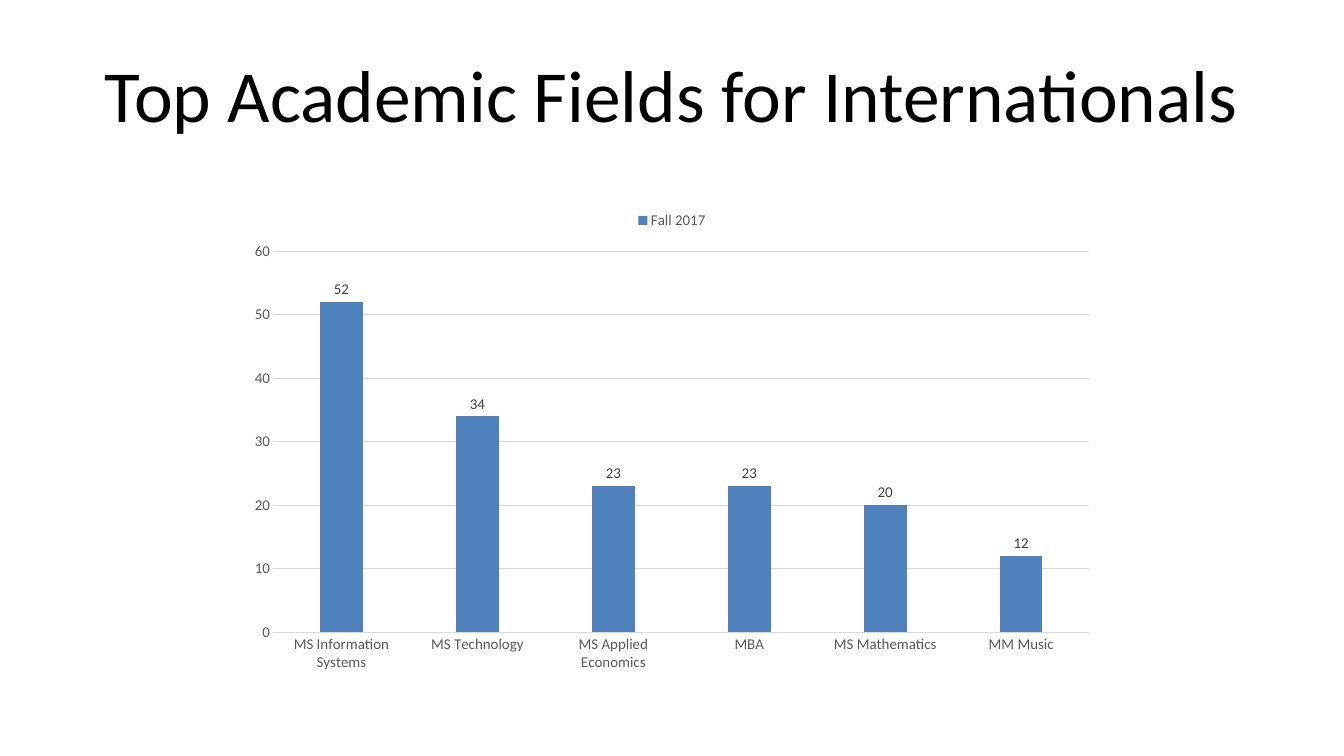
from pptx import Presentation
from pptx.chart.data import CategoryChartData
from pptx.dml.color import RGBColor
from pptx.enum.chart import XL_CHART_TYPE as ChartType, XL_LABEL_POSITION as LabelPosition
from pptx.enum.chart import XL_LEGEND_POSITION as LegendPosition, XL_TICK_MARK as TickMark
from pptx.enum.text import MSO_ANCHOR, PP_ALIGN
from pptx.util import Inches, Pt

TITLE = "Top Academic Fields for Internationals"
TERM = "Fall 2017"
STUDENTS = {
    "MS Information Systems": 52,
    "MS Technology": 34,
    "MS Applied Economics": 23,
    "MBA": 23,
    "MS Mathematics": 20,
    "MM Music": 12,
}
BLACK, GRAY, DARK_GRAY, LIGHT_GRAY, BLUE = "000000", "595959", "404040", "D9D9D9", "4F81BD"


def set_font(font, size, color):
    font.name = "Calibri"
    font.size = Pt(size)
    font.color.rgb = RGBColor.from_string(color)


def set_line(line, color):
    line.width = Pt(0.75)
    line.color.rgb = RGBColor.from_string(color)


def add_title(slide):
    box = slide.shapes.add_textbox(Inches(0.75), Inches(0.34), Inches(13.5), Inches(1.41))
    frame = box.text_frame
    frame.word_wrap = True
    frame.vertical_anchor = MSO_ANCHOR.MIDDLE
    frame.margin_left = frame.margin_right = Inches(0.13)
    frame.margin_top = frame.margin_bottom = Inches(0.07)
    paragraph = frame.paragraphs[0]
    paragraph.text = TITLE
    paragraph.alignment = PP_ALIGN.CENTER
    set_font(paragraph.font, 59, BLACK)


def add_field_chart(slide):
    data = CategoryChartData()
    data.categories = list(STUDENTS)
    data.add_series(TERM, list(STUDENTS.values()))
    chart = slide.shapes.add_chart(
        ChartType.COLUMN_CLUSTERED, Inches(2.65), Inches(2.25), Inches(9.7), Inches(5.35), data
    ).chart
    set_font(chart.font, 10, BLACK)
    chart.has_title = False
    chart.has_legend = True
    chart.legend.position = LegendPosition.TOP
    chart.legend.include_in_layout = False
    set_font(chart.legend.font, 12, GRAY)

    for axis in (chart.category_axis, chart.value_axis):
        axis.major_tick_mark = axis.minor_tick_mark = TickMark.NONE
        set_font(axis.tick_labels.font, 12, GRAY)
    set_line(chart.category_axis.format.line, LIGHT_GRAY)
    value_axis = chart.value_axis
    value_axis.minimum_scale, value_axis.maximum_scale, value_axis.major_unit = 0, 60, 10
    value_axis.format.line.fill.background()
    set_line(value_axis.major_gridlines.format.line, LIGHT_GRAY)

    plot = chart.plots[0]
    plot.gap_width, plot.overlap = 219, -27
    plot.vary_by_categories = False
    series = plot.series[0]
    series.format.fill.solid()
    series.format.fill.fore_color.rgb = RGBColor.from_string(BLUE)
    labels = series.data_labels
    labels.show_value = True
    labels.position = LabelPosition.OUTSIDE_END
    set_font(labels.font, 12, DARK_GRAY)


def main():
    presentation = Presentation()
    presentation.slide_width, presentation.slide_height = Inches(15), Inches(8.44)
    slide = presentation.slides.add_slide(presentation.slide_layouts[6])
    add_title(slide)
    add_field_chart(slide)
    presentation.save("out.pptx")


if __name__ == "__main__":
    main()
